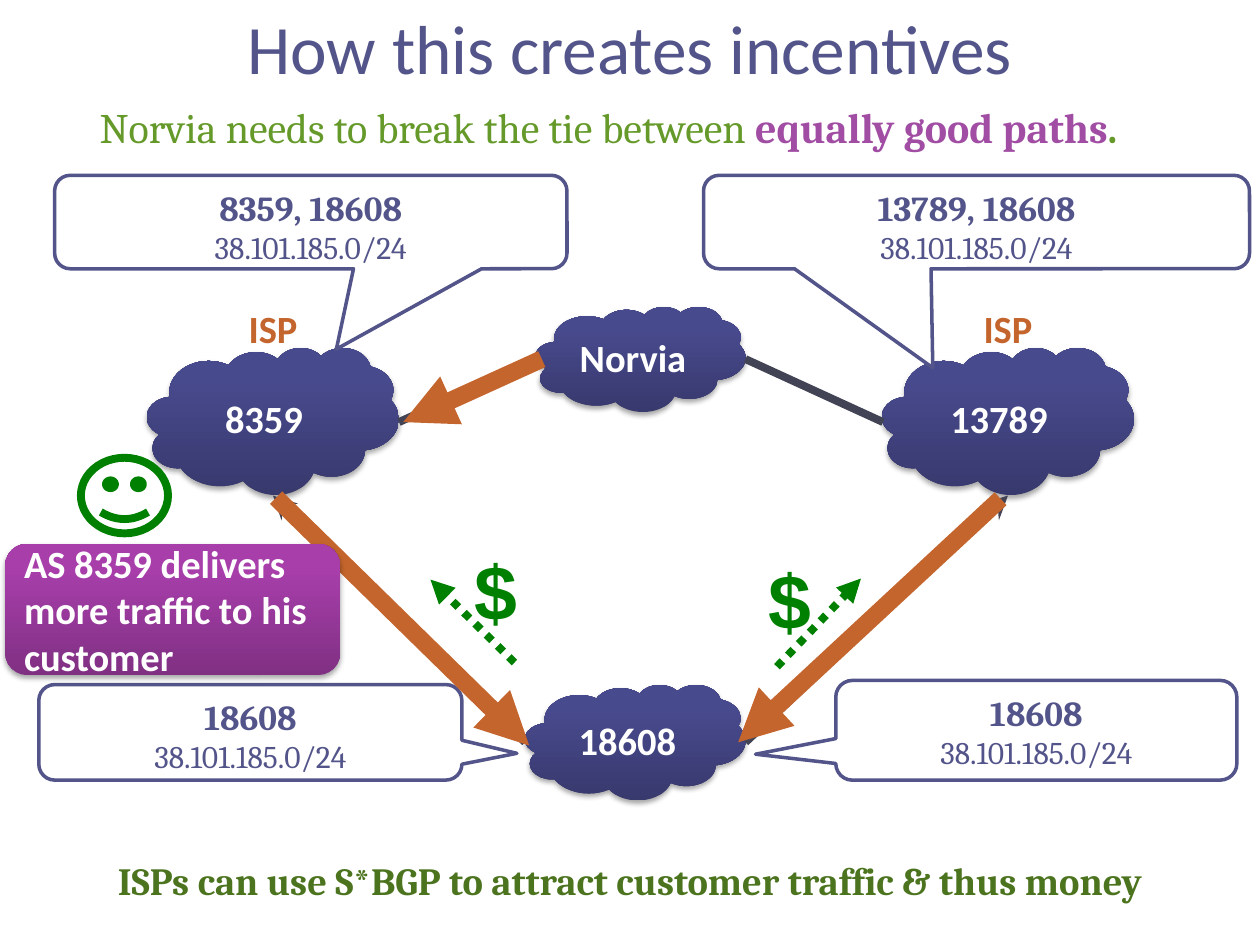
from lxml.etree import SubElement
from pptx import Presentation
from pptx.dml.color import RGBColor
from pptx.enum.dml import MSO_LINE
from pptx.enum.shapes import MSO_CONNECTOR, MSO_SHAPE
from pptx.enum.text import MSO_ANCHOR, PP_ALIGN
from pptx.oxml.ns import qn
from pptx.util import Inches, Pt

WIDTH, HEIGHT = Inches(10), Inches(7.5)
COLUMNS, ROWS = 120, 90

INDIGO = RGBColor(0x53, 0x54, 0x8A)
INDIGO_DARK = RGBColor(0x38, 0x39, 0x6D)
INDIGO_LIGHT = RGBColor(0x48, 0x4A, 0x8E)
PURPLE = RGBColor(0xA0, 0x4D, 0xA3)
PURPLE_DARK = RGBColor(0x80, 0x30, 0x83)
PURPLE_LIGHT = RGBColor(0xA7, 0x3E, 0xAA)
SLATE = RGBColor(0x42, 0x44, 0x56)
ORANGE = RGBColor(0xC4, 0x65, 0x2D)
GREEN = RGBColor(0x00, 0x80, 0x00)
LEAF = RGBColor(0x65, 0x9A, 0x2A)
LEAF_DARK = RGBColor(0x4C, 0x74, 0x1F)
WHITE = RGBColor(0xFF, 0xFF, 0xFF)

CLOUDS = [
    ("8359", (14, 33.1, 24, 14)),
    ("Norvia", (51, 29.2, 20, 10)),
    ("18608", (50, 65.2, 21, 11)),
    ("13789", (84, 33.1, 24, 14)),
]
LINKS = [
    ((71, 70.7), (96, 47.2), "stealth"),
    ((50, 70.7), (26, 47.2), "stealth"),
    ((38, 40.2), (51.1, 34.2), None),
    ((71, 34.2), (84.1, 40.2), None),
]
CALLOUTS = [
    ("18608", (3.7, 65.2, 40.3, 9.1), (0.63, 0.22)),
    ("8359, 18608", (5.2, 16.7, 48.8, 8.9), (0.05, 1.36)),
    ("18608", (79.6, 64.8, 38.2, 9.5), (-0.7, 0.24)),
    ("13789, 18608", (67, 16.7, 52, 8.9), (-0.08, 1.56)),
]
TRAFFIC = [
    ((70.3, 70.7), (95.3, 47.5)),
    ((50.4, 71), (26.3, 47.4)),
    ((38.4, 40.2), (51.6, 34.2)),
]
PAYMENTS = [
    ((49, 63.1), (41, 55.2), (44, 51.2, 5, 10.1)),
    ((74, 63.5), (82, 55.1), (72, 52, 8, 10.1)),
]


def across(columns):
    """Return the length of a number of grid columns."""
    return round(WIDTH * columns / COLUMNS)


def down(rows):
    """Return the length of a number of grid rows."""
    return round(HEIGHT * rows / ROWS)


def place(box):
    """Turn a box in grid units into left, top, width and height."""
    left, top, width, height = box
    return across(left), down(top), across(width), down(height)


def format_run(run, size, color, font="Calibri", bold=True):
    """Set the font of one run."""
    run.font.size = Pt(size)
    run.font.name = font
    run.font.bold = bold
    run.font.color.rgb = color


def write(shape, text, size, color, font="Calibri", align=PP_ALIGN.CENTER):
    """Fill a shape with one paragraph in one style."""
    shape.text_frame.text = text
    paragraph = shape.text_frame.paragraphs[0]
    paragraph.alignment = align
    format_run(paragraph.runs[0], size, color, font)
    return paragraph


def add_plain_shape(slide, kind, box):
    """Add a preset shape without fill, line or shadow."""
    shape = slide.shapes.add_shape(kind, *place(box))
    shape.shadow.inherit = False
    shape.fill.background()
    shape.line.fill.background()
    return shape


def add_raised_shape(slide, kind, box, dark, light):
    """Add a shape with an upward gradient and a soft shadow."""
    shape = add_plain_shape(slide, kind, box)
    shape.fill.gradient()
    shape.fill.gradient_angle = 90
    for stop, position, color in zip(shape.fill.gradient_stops, (0, 0.8), (dark, light)):
        stop.position = position
        stop.color.rgb = color
    effects = shape.element.spPr.find(qn("a:effectLst"))
    shadow = SubElement(effects, qn("a:outerShdw"), blurRad=str(Pt(3.1)),
                        dist=str(Pt(1.8)), dir="5400000", rotWithShape="0")
    shade = SubElement(shadow, qn("a:srgbClr"), val="000000")
    SubElement(shade, qn("a:alpha"), val="35000")
    return shape


def add_line(slide, start, end, color, width, arrow=None, at="tailEnd", dash=None):
    """Draw a straight line with an optional arrowhead."""
    line = slide.shapes.add_connector(
        MSO_CONNECTOR.STRAIGHT, across(start[0]), down(start[1]), across(end[0]), down(end[1]))
    line.line.color.rgb = color
    line.line.width = Pt(width)
    if dash:
        line.line.dash_style = dash
    if arrow:
        SubElement(line.line._get_or_add_ln(), qn(f"a:{at}"), type=arrow)
    SubElement(line.element.spPr, qn("a:effectLst"))


def add_callout(slide, route, box, tip):
    """Add a speech bubble with a route and its address prefix."""
    bubble = add_plain_shape(slide, MSO_SHAPE.ROUNDED_RECTANGULAR_CALLOUT, box)
    bubble.adjustments[0], bubble.adjustments[1] = tip
    bubble.fill.solid()
    bubble.fill.fore_color.rgb = WHITE
    bubble.line.color.rgb = INDIGO
    bubble.line.width = Pt(2)
    bubble.text_frame.vertical_anchor = MSO_ANCHOR.TOP
    write(bubble, route, 20, INDIGO, "Cambria")
    prefix = bubble.text_frame.add_paragraph()
    prefix.text = "38.101.185.0/24"
    prefix.alignment = PP_ALIGN.CENTER
    format_run(prefix.runs[0], 18, INDIGO, "Cambria", False)


def add_network(slide):
    """Draw the labelled clouds and the links between them."""
    for left in (89.6, 19.6):
        label = add_plain_shape(slide, MSO_SHAPE.ROUNDED_RECTANGLE, (left, 27.2, 12.8, 8.2))
        write(label, "ISP", 22, ORANGE)
    for name, box in CLOUDS:
        cloud = add_raised_shape(slide, MSO_SHAPE.CLOUD, box, INDIGO_DARK, INDIGO_LIGHT)
        cloud.text_frame.word_wrap = False
        write(cloud, name, 22, WHITE)
    for start, end, arrow in LINKS:
        add_line(slide, start, end, SLATE, 4.5, arrow)


def add_smiley(slide):
    """Draw the happy face of the winning network."""
    face = add_plain_shape(slide, MSO_SHAPE.SMILEY_FACE, (7.7, 43.6, 8.3, 7.2))
    face.fill.solid()
    face.fill.fore_color.rgb = WHITE
    face.line.color.rgb = GREEN
    face.line.width = Pt(4.5)


def add_title(slide):
    """Fill and place the title."""
    title = slide.shapes.title
    title.left, title.top, title.width, title.height = place((0, 0, COLUMNS, 9))
    title.text_frame.vertical_anchor = MSO_ANCHOR.MIDDLE
    paragraph = write(title, "How this creates incentives", 39.6, INDIGO)
    paragraph.runs[0].font.bold = False


def add_subtitle(slide):
    """Write the line under the title in its three styles."""
    box = slide.shapes.add_textbox(*place((8.3, 9.1, 103.6, 6)))
    box.text_frame.word_wrap = False
    paragraph = box.text_frame.paragraphs[0]
    for text, color, bold in (("Norvia needs to break the tie between ", LEAF, False),
                              ("equally good paths", PURPLE, True), (".", LEAF, True)):
        run = paragraph.add_run()
        run.text = text
        format_run(run, 24, color, "Cambria", bold)


def add_text(slide, text, box, size, color, font, align):
    """Add a wrapped one-style text box."""
    text_box = slide.shapes.add_textbox(*place(box))
    text_box.text_frame.word_wrap = True
    return write(text_box, text, size, color, font, align)


def main():
    """Build the slide and save it."""
    presentation = Presentation()
    presentation.slide_width, presentation.slide_height = WIDTH, HEIGHT
    slide = presentation.slides.add_slide(presentation.slide_layouts[5])
    add_network(slide)
    add_title(slide)
    for route, box, tip in CALLOUTS:
        add_callout(slide, route, box, tip)
    for start, end in TRAFFIC:
        add_line(slide, start, end, ORANGE, 10, "triangle", "headEnd")
    add_smiley(slide)
    takeaway = add_text(slide, "ISPs can use S*BGP to attract customer traffic & thus money",
                        (-2, 81, 124, 5.9), 22, LEAF_DARK, "Cambria", PP_ALIGN.CENTER)
    takeaway.space_before = Pt(4.4)
    for start, end, box in PAYMENTS:
        add_line(slide, start, end, GREEN, 4.5, "triangle", dash=MSO_LINE.ROUND_DOT)
        add_text(slide, "$", box, 44, GREEN, "Arial", PP_ALIGN.LEFT)
    note = add_raised_shape(slide, MSO_SHAPE.ROUNDED_RECTANGLE, (0.5, 51.8, 31.9, 12.5),
                            PURPLE_DARK, PURPLE_LIGHT)
    write(note, "AS 8359 delivers more traffic to his customer", 22, WHITE, align=PP_ALIGN.LEFT)
    add_subtitle(slide)
    presentation.save("out.pptx")


if __name__ == "__main__":
    main()
